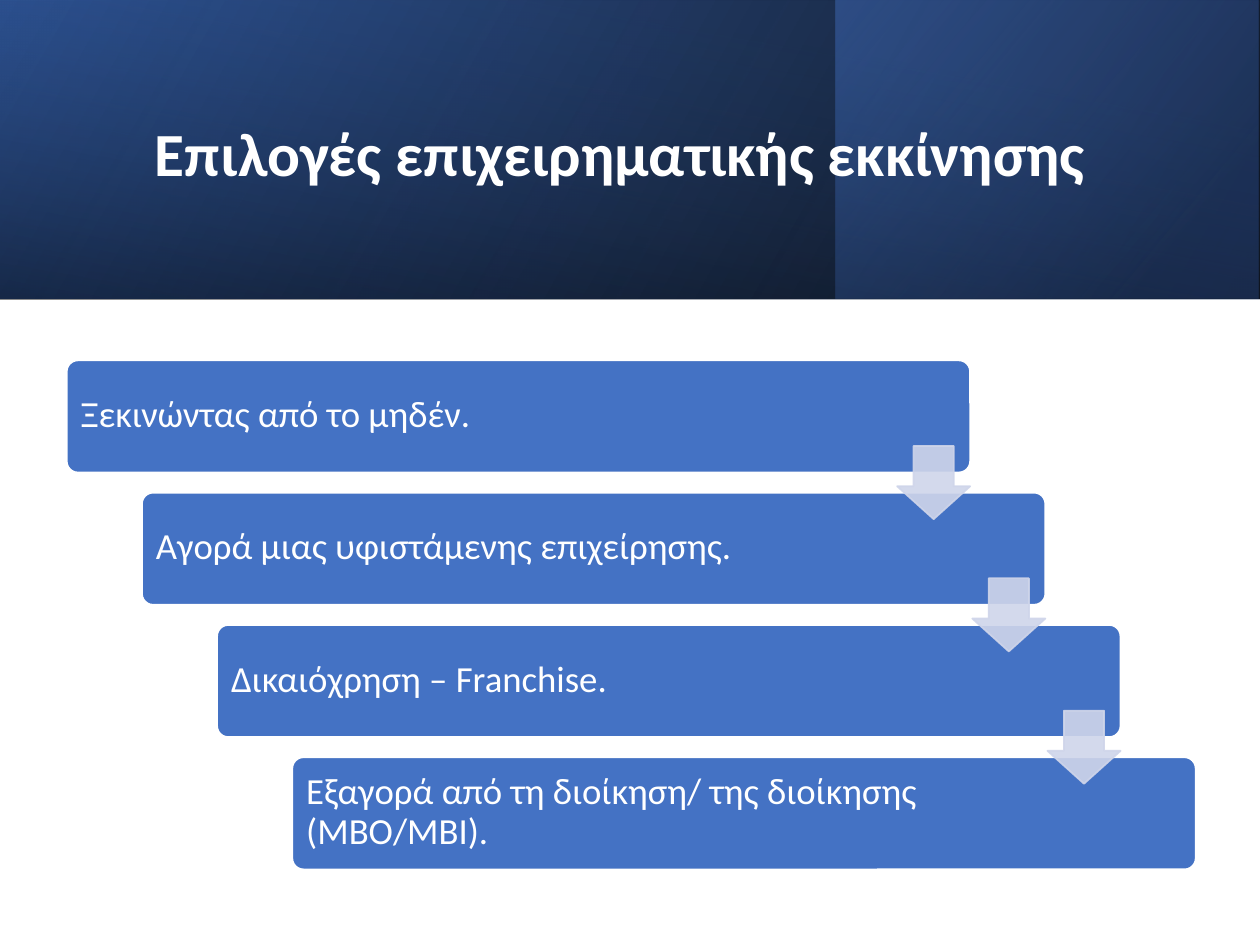
from dataclasses import dataclass

from lxml.etree import SubElement
from pptx import Presentation
from pptx.dml.color import RGBColor
from pptx.enum.shapes import MSO_SHAPE as SHAPE
from pptx.enum.text import MSO_ANCHOR as ANCHOR, MSO_AUTO_SIZE as AUTO_SIZE, PP_ALIGN as ALIGN
from pptx.oxml.ns import qn
from pptx.util import Inches, Pt


@dataclass(frozen=True)
class Theme:
    font: str = "Calibri"
    title_size: int = 35
    step_size: int = 21
    white: str = "FFFFFF"
    black: str = "000000"
    blue: str = "4472C4"
    deep_blue: str = "2F5597"
    navy: str = "203864"
    arrow: str = "CFD5EA"
    arrow_opacity: int = 90


theme = Theme()


def set_opacity(fill_element, percent):
    """Add an opacity to every RGB colour inside a fill or line element."""
    for color in fill_element.iter(qn("a:srgbClr")):
        SubElement(color, qn("a:alpha")).set("val", str(percent * 1000))


def write_text(box, text, *, size, color, bold=False, inset=0.1):
    frame = box.text_frame
    frame.word_wrap = True
    frame.auto_size = AUTO_SIZE.NONE
    frame.vertical_anchor = ANCHOR.MIDDLE
    frame.margin_left = frame.margin_right = Inches(inset)
    frame.margin_top = frame.margin_bottom = Inches(inset)
    para = frame.paragraphs[0]
    para.alignment = ALIGN.LEFT
    para.line_spacing = 0.9
    para.space_before = Pt(0)
    span = para.add_run()
    span.text = text
    span.font.name = theme.font
    span.font.size = Pt(size)
    span.font.bold = bold
    span.font.color.rgb = RGBColor.from_string(color)


deck = Presentation()
deck.slide_width, deck.slide_height = Inches(10), Inches(7.5)
page = deck.slides.add_slide(deck.slide_layouts[5])
shapes = page.shapes

# Header band: three layered gradients (stops are position, colour, opacity)
header_layers = [
    ((0, 0, 10, 2.37), 0, 30,
     [(0, theme.black, 96), (1, theme.deep_blue, 100)]),
    ((6.63, 0, 3.36, 2.37), 0, 40,
     [(0.19, theme.navy, 68), (1, theme.blue, 48)]),
    ((3.81, -3.81, 2.37, 10), 270, 10,
     [(0.23, theme.deep_blue, 16), (0.99, theme.black, 45)]),
]
for place, rotation, angle, stops in header_layers:
    layer = shapes.add_shape(SHAPE.RECTANGLE, *map(Inches, place))
    layer.shadow.inherit = False
    layer.line.fill.background()
    layer.rotation = rotation
    layer._element.spPr.find(qn("a:xfrm")).set("flipH", "1")
    layer.fill.gradient()
    layer.fill.gradient_angle = angle
    for stop, (position, color, opacity) in zip(layer.fill.gradient_stops, stops):
        stop.position = position
        stop.color.rgb = RGBColor.from_string(color)
        set_opacity(stop._gs, opacity)

# Title, moved in front of the header band
title = shapes.title
title.left, title.top = Inches(1.13), Inches(0.38)
title.width, title.height = Inches(7.97), Inches(1.72)
write_text(title, "Επιλογές επιχειρηματικής εκκίνησης",
           size=theme.title_size, color=theme.white, bold=True)
shapes._spTree.append(title._element)

# Staircase of options
steps = [
    "Ξεκινώντας από το μηδέν.",
    "Αγορά μιας υφιστάμενης επιχείρησης.",
    "Δικαιόχρηση – Franchise.",
    "Εξαγορά από τη διοίκηση/ της διοίκησης (ΜΒΟ/ΜΒΙ).",
]
left, top = 0.53, 2.86
shift, drop = (2.32 - left) / 3, 1.05
for index, text in enumerate(steps):
    x, y = left + index * shift, top + index * drop
    bar = shapes.add_shape(SHAPE.ROUNDED_RECTANGLE, Inches(x), Inches(y),
                           Inches(7.17), Inches(0.89))
    bar.adjustments[0] = 0.1
    bar.shadow.inherit = False
    bar.fill.solid()
    bar.fill.fore_color.rgb = RGBColor.from_string(theme.blue)
    bar.line.color.rgb = RGBColor.from_string(theme.white)
    bar.line.width = Pt(1)
    label = shapes.add_textbox(Inches(x + 0.02), Inches(y + 0.02),
                               Inches(5.95), Inches(0.84))
    write_text(label, text, size=theme.step_size, color=theme.white, inset=0.09)

# Arrows from each step to the next
for index in range(len(steps) - 1):
    arrow = shapes.add_shape(SHAPE.DOWN_ARROW, Inches(7.12 + index * shift),
                             Inches(3.54 + index * drop), Inches(0.58), Inches(0.58))
    arrow.adjustments[0], arrow.adjustments[1] = 0.55, 0.45
    arrow.shadow.inherit = False
    arrow.fill.solid()
    arrow.fill.fore_color.rgb = RGBColor.from_string(theme.arrow)
    arrow.line.color.rgb = RGBColor.from_string(theme.arrow)
    arrow.line.width = Pt(1)
    set_opacity(arrow._element.spPr, theme.arrow_opacity)

deck.save("out.pptx")
